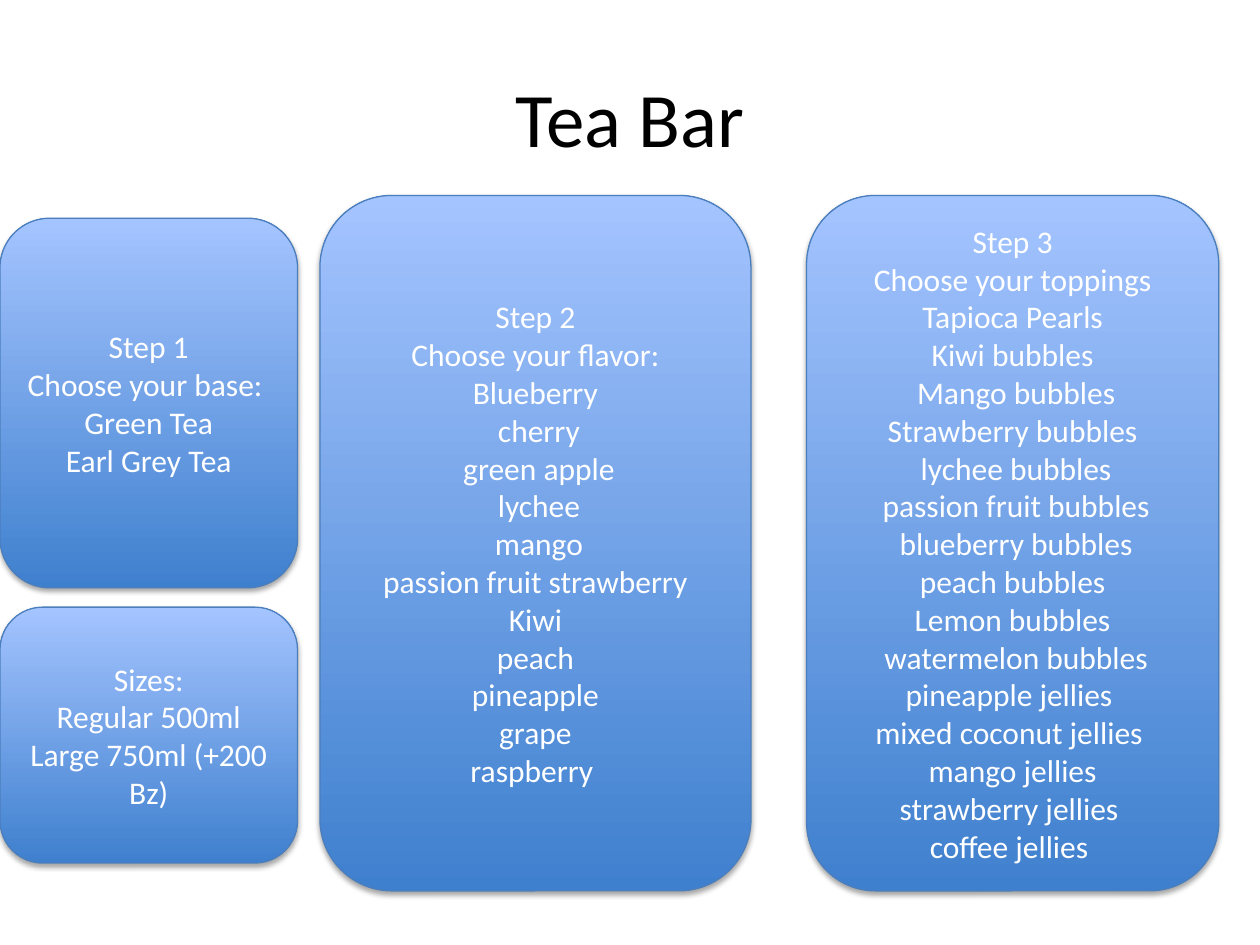
from lxml.etree import SubElement as Sub
from pptx import Presentation
from pptx.dml.color import RGBColor as Rgb
from pptx.enum.shapes import MSO_SHAPE as Shape
from pptx.enum.text import MSO_ANCHOR as Anchor, PP_ALIGN as Align
from pptx.oxml.ns import qn
from pptx.util import Cm, Pt

hues = {"title": "000000", "text": "FFFFFF", "line": "4B7EBC",
        "low": "3F80CE", "high": "A4C4FF", "shade": "000000"}


def write(frame, lines, size, hue):
    frame.word_wrap = True
    frame.vertical_anchor = Anchor.MIDDLE
    for i, line in enumerate(lines):
        para = frame.paragraphs[0] if i == 0 else frame.add_paragraph()
        para.alignment = Align.CENTER
        run = para.add_run()
        run.text = line
        run.font.name = "Calibri"
        run.font.size = Pt(size)
        run.font.color.rgb = Rgb.from_string(hues[hue])


def shade(shape):
    shape.shadow.inherit = False
    effects = shape._element.spPr.find(qn("a:effectLst"))
    outer = Sub(effects, qn("a:outerShdw"), blurRad=str(Pt(3.1)),
                dist=str(Pt(1.8)), dir="5400000", rotWithShape="0")
    color = Sub(outer, qn("a:srgbClr"), val=hues["shade"])
    Sub(color, qn("a:alpha"), val="35000")


deck = Presentation()
deck.slide_width, deck.slide_height = Cm(25.4), Cm(19.05)
slide = deck.slides.add_slide(deck.slide_layouts[6])

# Title
title = slide.shapes.add_textbox(Cm(1.27), Cm(0.76), Cm(22.86), Cm(3.18))
write(title.text_frame, ["Tea Bar"], 44, "title")

# Menu cards: left, top, width, height in cm, then the lines
cards = [
    (0, 4.4, 6, 7.45, [
        "Step 1", "Choose your base: ", "Green Tea", "Earl Grey Tea"]),
    (6.45, 3.94, 8.69, 14.02, [
        "Step 2", "Choose your flavor: Blueberry", " cherry",
        " green apple", " lychee", " mango", " passion fruit strawberry ",
        "Kiwi", " peach ", " pineapple ", " grape ", "raspberry "]),
    (16.26, 3.94, 8.31, 14.02, [
        "Step 3", "Choose your toppings Tapioca Pearls", "Kiwi bubbles",
        " Mango bubbles", "Strawberry bubbles", " lychee bubbles",
        " passion fruit bubbles", " blueberry bubbles", "peach bubbles",
        "Lemon bubbles", " watermelon bubbles", "pineapple jellies ",
        "mixed coconut jellies ", " mango jellies ", "strawberry jellies ",
        "coffee jellies "]),
    (0, 12.24, 6, 5.16, [
        "Sizes:", "Regular 500ml", "Large 750ml (+200 Bz)"]),
]
for *box, lines in cards:
    card = slide.shapes.add_shape(Shape.ROUNDED_RECTANGLE, *map(Cm, box))
    card.fill.gradient()
    card.fill.gradient_angle = 90
    for stop, hue in zip(card.fill.gradient_stops, ("low", "high")):
        stop.color.rgb = Rgb.from_string(hues[hue])
    card.line.color.rgb = Rgb.from_string(hues["line"])
    card.line.width = Pt(0.75)
    shade(card)
    write(card.text_frame, lines, 18, "text")

deck.save("out.pptx")
